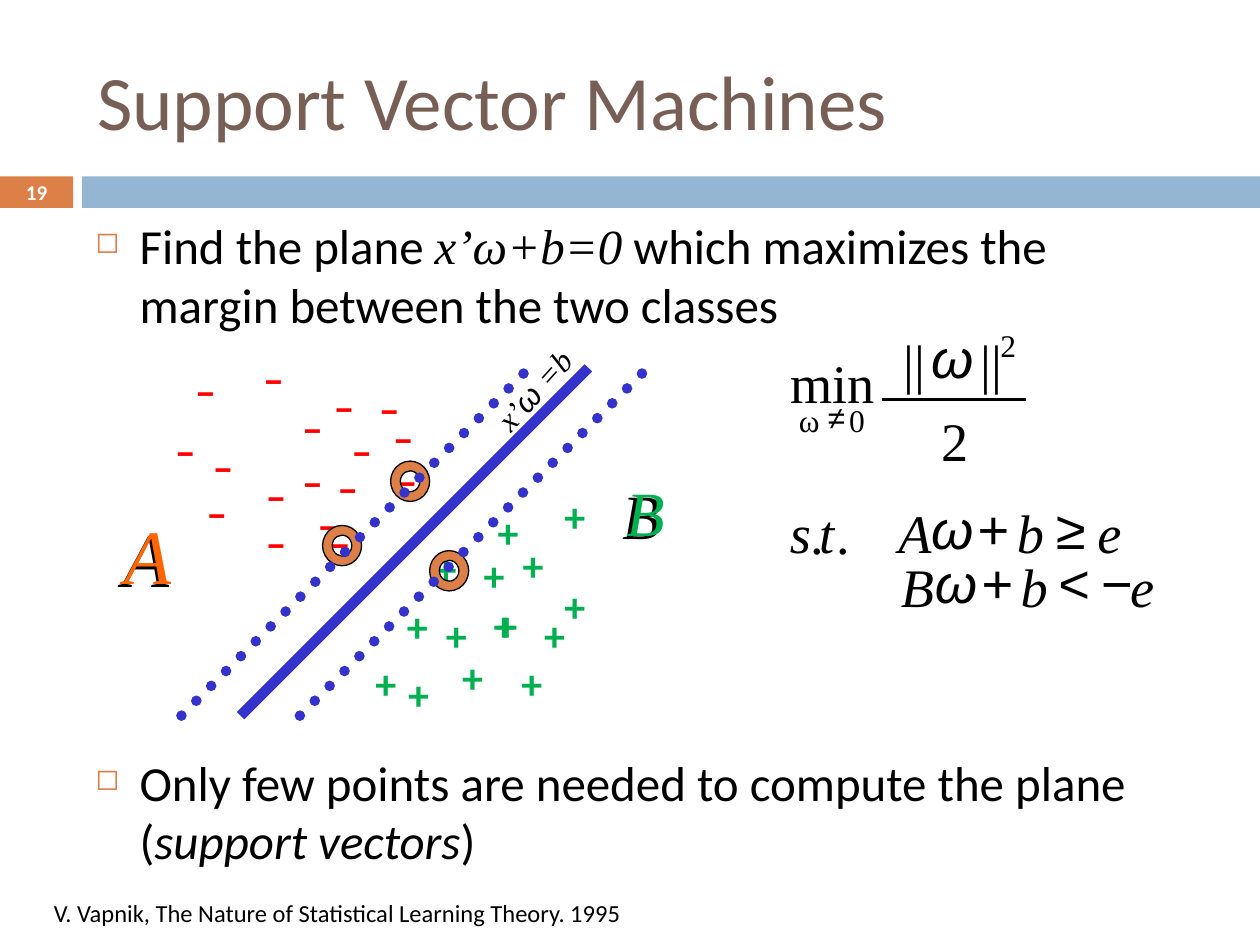
from lxml import etree
from pptx import Presentation
from pptx.dml.color import RGBColor
from pptx.enum.dml import MSO_LINE
from pptx.enum.shapes import MSO_CONNECTOR, MSO_SHAPE
from pptx.enum.text import MSO_ANCHOR, MSO_AUTO_SIZE, PP_ALIGN
from pptx.oxml.ns import qn
from pptx.util import Pt

PX = 9144  # 100 px to the inch
DOT = MSO_LINE.ROUND_DOT
RECT, DONUT = MSO_SHAPE.RECTANGLE, MSO_SHAPE.DONUT
LINE = MSO_CONNECTOR.STRAIGHT
MID, LEFT, CENTER = MSO_ANCHOR.MIDDLE, PP_ALIGN.LEFT, PP_ALIGN.CENTER
GROW, FIXED = MSO_AUTO_SIZE.SHAPE_TO_FIT_TEXT, MSO_AUTO_SIZE.NONE
SANS, SERIF, ARIAL = "Calibri", "Times New Roman", "Arial"
HEX = {"orange": "DD8047", "bar": "94B6D2", "title": "775F55",
       "white": "FFFFFF", "black": "000000", "green": "00B050",
       "red": "FF0000", "flame": "FF6600", "plane": "3333CC"}
RGB = {name: RGBColor.from_string(code) for name, code in HEX.items()}

prs = Presentation()
prs.slide_width, prs.slide_height = 1000 * PX, 750 * PX
slide = prs.slides.add_slide(prs.slide_layouts[5])
shapes = slide.shapes


def write(box, runs, size, font=SANS, color="black", bold=False,
          italic=False, wrap=False, pad=None):
    """Add text at box (left, top, width, height); a run is (text, font, italic)."""
    shape = shapes.add_textbox(*[n * PX for n in box])
    frame = shape.text_frame
    frame.word_wrap = wrap
    frame.auto_size = FIXED if wrap else GROW
    if pad is not None:
        frame.margin_left = frame.margin_right = pad
        frame.margin_top = frame.margin_bottom = pad
    para = frame.paragraphs[0]
    para.font.size, para.font.name = Pt(size), font
    para.font.bold, para.font.italic = bold, italic
    para.font.color.rgb = RGB[color]
    if isinstance(runs, str):
        runs = [(runs, font, italic)]
    for text, face, slant in runs:
        run = para.add_run()
        run.text = text
        run.font.name, run.font.italic = face, slant
        run.font.size, run.font.bold = Pt(size), bold
        run.font.color.rgb = RGB[color]
    return shape


def draw_line(start, end, color, width, dash=None):
    line = shapes.add_connector(LINE, *[n * PX for n in start + end])
    line.line.color.rgb = RGB[color]
    line.line.width = Pt(width)
    if dash:
        line.line.dash_style = dash
        line.line._get_or_add_ln().set("cap", "rnd")
    etree.SubElement(line._element.spPr, qn("a:effectLst"))


# Header
for x, w, color in [(0, 58, "orange"), (65, 935, "bar")]:
    bar = shapes.add_shape(RECT, x * PX, 140 * PX, w * PX, 25 * PX)
    bar.shadow.inherit = False
    bar.fill.solid()
    bar.fill.fore_color.rgb = RGB[color]
    bar.line.fill.background()

title = shapes.title
title.left, title.top = 67 * PX, 25 * PX
title.width, title.height = 892 * PX, 108 * PX
title.text_frame.text = "Support Vector Machines"
title.text_frame.vertical_anchor = MID
title.text_frame.auto_size = FIXED
head = title.text_frame.paragraphs[0]
head.alignment = LEFT
head.font.size, head.font.name = Pt(44), SANS
head.font.color.rgb = RGB["title"]

page = write((0, 139, 58, 27), "19", 12, color="white", bold=True, wrap=True)
page.text_frame.vertical_anchor = MID
page.text_frame.paragraphs[0].alignment = CENTER

# Bullets
bullets = [
    ((66, 166, 850, 142),
     [("Find the plane ", SANS, False), ("x’ω+b=0", SERIF, True),
      (" which maximizes the margin between the two classes", SANS, False)]),
    ((66, 592, 850, 142),
     [("Only few points are needed to compute the plane (", SANS, False),
      ("support vectors", SANS, True), (")", SANS, False)])]
for box, runs in bullets:
    para = write(box, runs, 28, wrap=True).text_frame.paragraphs[0]
    para.space_before = para.space_after = Pt(7)
    props = para._p.get_or_add_pPr()
    props.set("marL", str(35 * PX))
    props.set("indent", str(-35 * PX))
    tint = etree.SubElement(props, qn("a:buClr"))
    etree.SubElement(tint, qn("a:srgbClr"), val=HEX["orange"])
    etree.SubElement(props, qn("a:buSzPct"), val="60000")
    etree.SubElement(props, qn("a:buChar"), char="◻")

# Points of the two classes
minus = [(252, 405), (305, 356), (242, 391), (129, 332), (159, 345),
         (145, 284), (199, 275), (230, 314), (255, 297), (291, 299),
         (302, 322), (269, 332), (258, 361), (230, 357), (201, 368),
         (154, 381), (201, 405)]
plus = [(336, 426), (288, 517), (314, 526), (313, 472), (344, 479),
        (357, 512), (385, 397), (374, 431), (384, 471), (405, 423),
        (382, 471), (404, 517), (438, 384), (438, 456), (422, 479)]
for sign, color, w, spots in [("–", "red", 46, minus), ("+", "green", 52, plus)]:
    for x, y in spots:
        write((x, y, w, 50), sign, 24, color=color, bold=True)

# Class names, each over its black shade
for box, name, size, color in [
        ((87, 400, 61, 83), "A", 44, "black"),
        ((89, 398, 57, 83), "A", 44, "flame"),
        ((484, 373, 53, 70), "B", 36, "black"),
        ((487, 371, 51, 70), "B", 36, "green")]:
    write(box, name, size, SERIF, color, italic=True)

# Plane, support vectors and margins
draw_line((191, 568), (467, 292), "plane", 6)
for x, y in [(256, 417), (341, 437), (310, 366)]:
    ring = shapes.add_shape(DONUT, x * PX, y * PX, 31 * PX, 32 * PX)
    ring.shadow.inherit = False
    ring.fill.solid()
    ring.fill.fore_color.rgb = RGB["orange"]
    ring.line.color.rgb = RGB["black"]
    ring.line.width = Pt(0.75)
for x in (238, 144):
    draw_line((x, 568), (x + 276, 292), "plane", 6, DOT)
label = write((376, 289, 96, 40),
              [("x’", SERIF, True), ("ω ", ARIAL, True), ("=b", SERIF, True)],
              18, SERIF, italic=True)
label.rotation = 312.2

# Formula: size, font, italic, then glyphs as (left, top, width, text)
draw_line((700, 317), (814, 317), "black", 0)
glyphs = [
    (31, SERIF, True, [
        (897, 439, 19, "e"), (810, 439, 22, "b"), (715, 439, 26, "B"),
        (871, 396, 19, "e"), (807, 396, 22, "b"), (713, 396, 26, "A"),
        (650, 396, 12, "t"), (627, 396, 17, "s")]),
    (31, ARIAL, False, [
        (874, 436, 24, "−"), (840, 436, 24, "<"), (779, 436, 24, "+"),
        (838, 393, 24, "≥"), (776, 393, 24, "+")]),
    (31, ARIAL, True, [
        (742, 436, 30, "ω"), (739, 393, 30, "ω"), (739, 257, 30, "ω")]),
    (31, SERIF, False, [
        (664, 397, 11, "."), (643, 397, 11, "."), (747, 323, 22, "2"),
        (778, 261, 18, "||"), (717, 261, 18, "||"), (627, 277, 68, "min")]),
    (18, ARIAL, False, [(657, 316, 14, "≠")]),
    (18, SERIF, False, [
        (794, 259, 13, "2"), (674, 318, 13, "0"), (634, 318, 17, "ω")])]
for size, font, slant, marks in glyphs:
    h = 52 if size == 31 else 30
    for x, y, w, text in marks:
        write((x, y, w, h), text, size, font, italic=slant, pad=0)

write((33, 708, 477, 34),
      "V. Vapnik, The Nature of Statistical Learning Theory. 1995", 14)

prs.save("out.pptx")
